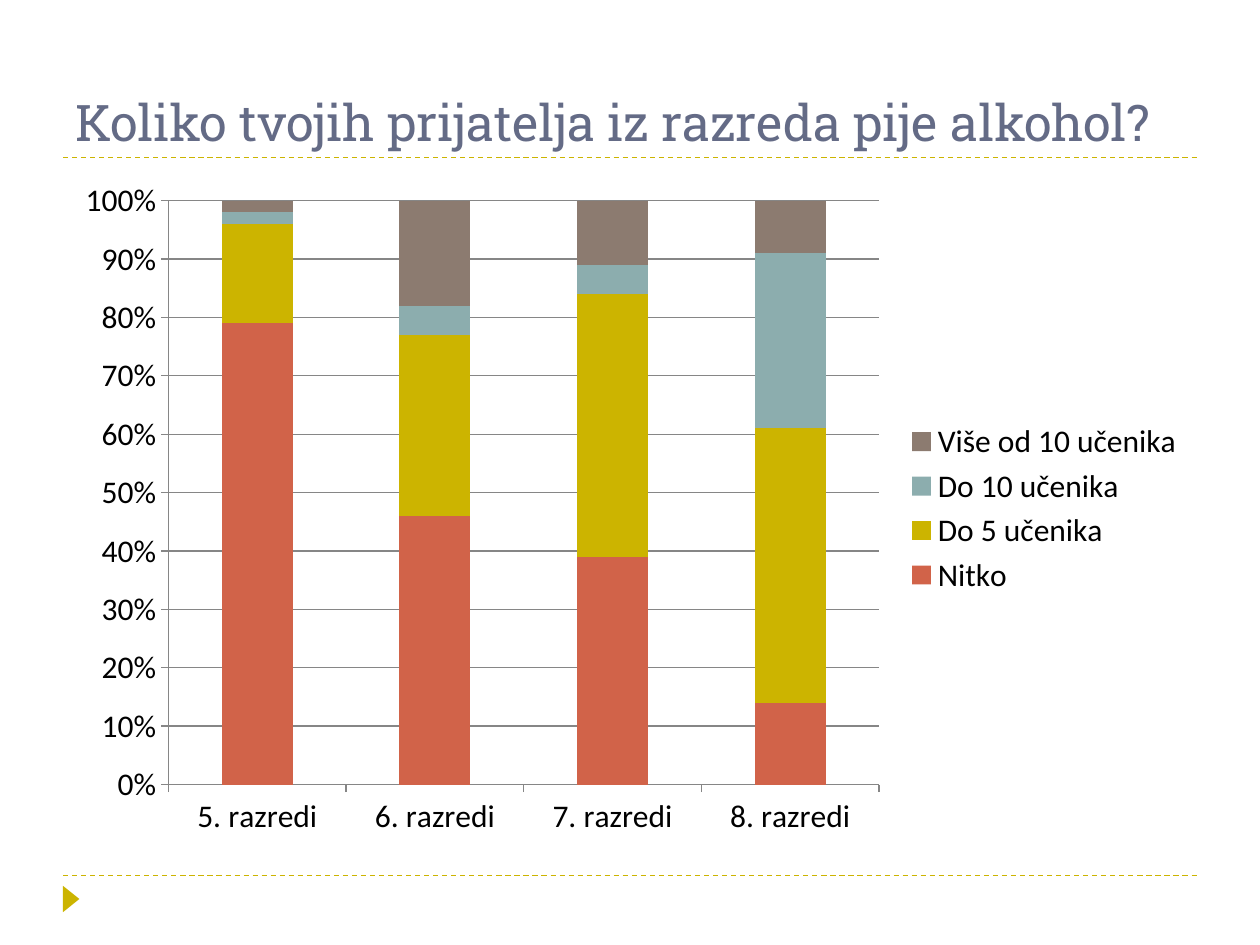
import pptx
import pptx.chart.data
import pptx.dml.color
import pptx.enum.chart
import pptx.enum.dml
import pptx.enum.shapes
import pptx.enum.text
import pptx.oxml.ns
import pptx.util
from dataclasses import dataclass
from lxml import etree

Pt = pptx.util.Pt


@dataclass(frozen=True)
class Theme:
    accent: str = "CCB400"
    title: str = "646B86"
    text: str = "000000"
    grid: str = "868686"
    series: tuple = ("D16349", "CCB400", "8CADAE", "8C7B70")
    title_font: str = "Roboto Slab"
    chart_font: str = "Calibri"
    title_size: float = 28.8
    chart_size: float = 18
    line_width: float = 0.75


THEME = Theme()
LEFT, WIDTH = 36, 648

CLASSES = ("5. razredi", "6. razredi", "7. razredi", "8. razredi")
ANSWERS = {
    "Nitko": (79, 46, 39, 14),
    "Do 5 učenika": (17, 31, 45, 47),
    "Do 10 učenika": (2, 5, 5, 30),
    "Više od 10 učenika": (2, 18, 11, 9),
}


def rgb(value):
    return pptx.dml.color.RGBColor.from_string(value)


def style_font(font, name, size, color):
    font.name = name
    font.size = Pt(size)
    font.color.rgb = rgb(color)


def add_rule(s, y):
    """Dashed line across the content width."""
    line = s.shapes.add_connector(
        pptx.enum.shapes.MSO_CONNECTOR.STRAIGHT,
        Pt(LEFT), Pt(y), Pt(LEFT + WIDTH), Pt(y))
    line.line.color.rgb = rgb(THEME.accent)
    line.line.width = Pt(THEME.line_width)
    line.line.dash_style = pptx.enum.dml.MSO_LINE.DASH
    etree.SubElement(line._element.spPr, pptx.oxml.ns.qn("a:effectLst"))


def add_marker(s):
    """Triangle pointing right below the footer rule."""
    sp = s.shapes.add_shape(
        pptx.enum.shapes.MSO_SHAPE.ISOSCELES_TRIANGLE,
        Pt(33.1), Pt(509), Pt(15.1), Pt(9.4))
    sp.rotation = 90
    sp.shadow.inherit = False
    sp.fill.solid()
    sp.fill.fore_color.rgb = rgb(THEME.accent)
    sp.line.fill.background()


def add_title(s, text):
    sp = s.shapes.add_textbox(Pt(LEFT), Pt(12), Pt(WIDTH), Pt(78))
    tf = sp.text_frame
    tf.word_wrap = True
    tf.vertical_anchor = pptx.enum.text.MSO_ANCHOR.BOTTOM
    tf.text = text
    r = tf.paragraphs[0].runs[0]
    style_font(r.font, THEME.title_font, THEME.title_size, THEME.title)


def style_line(line):
    line.color.rgb = rgb(THEME.grid)
    line.width = Pt(THEME.line_width)


def add_answer_chart(s):
    data = pptx.chart.data.CategoryChartData()
    data.categories = CLASSES
    for name, values in ANSWERS.items():
        data.add_series(name, values)
    chart = s.shapes.add_chart(
        pptx.enum.chart.XL_CHART_TYPE.COLUMN_STACKED_100,
        Pt(LEFT), Pt(96), Pt(WIDTH), Pt(389), data).chart
    chart.has_title = False
    style_font(chart.font, THEME.chart_font, THEME.chart_size, THEME.text)

    # Columns
    plot = chart.plots[0]
    plot.gap_width = 150
    plot.overlap = 100
    plot.vary_by_categories = False
    for series, color in zip(plot.series, THEME.series):
        series.format.fill.solid()
        series.format.fill.fore_color.rgb = rgb(color)

    # Axes and gridlines
    for axis in (chart.category_axis, chart.value_axis):
        axis.major_tick_mark = pptx.enum.chart.XL_TICK_MARK.OUTSIDE
        axis.minor_tick_mark = pptx.enum.chart.XL_TICK_MARK.NONE
        style_line(axis.format.line)
    chart.value_axis.has_major_gridlines = True
    style_line(chart.value_axis.major_gridlines.format.line)
    labels = chart.value_axis.tick_labels
    labels.number_format = "0%"
    labels.number_format_is_linked = False

    # Legend
    chart.has_legend = True
    chart.legend.position = pptx.enum.chart.XL_LEGEND_POSITION.RIGHT
    chart.legend.include_in_layout = False


def main():
    prs = pptx.Presentation()
    prs.slide_width, prs.slide_height = Pt(720), Pt(540)
    s = prs.slides.add_slide(prs.slide_layouts[6])

    # Frame
    for y in (500.4, 90):
        add_rule(s, y)
    add_marker(s)

    # Content
    add_title(s, "Koliko tvojih prijatelja iz razreda pije alkohol?")
    add_answer_chart(s)
    prs.save("out.pptx")


if __name__ == "__main__":
    main()
